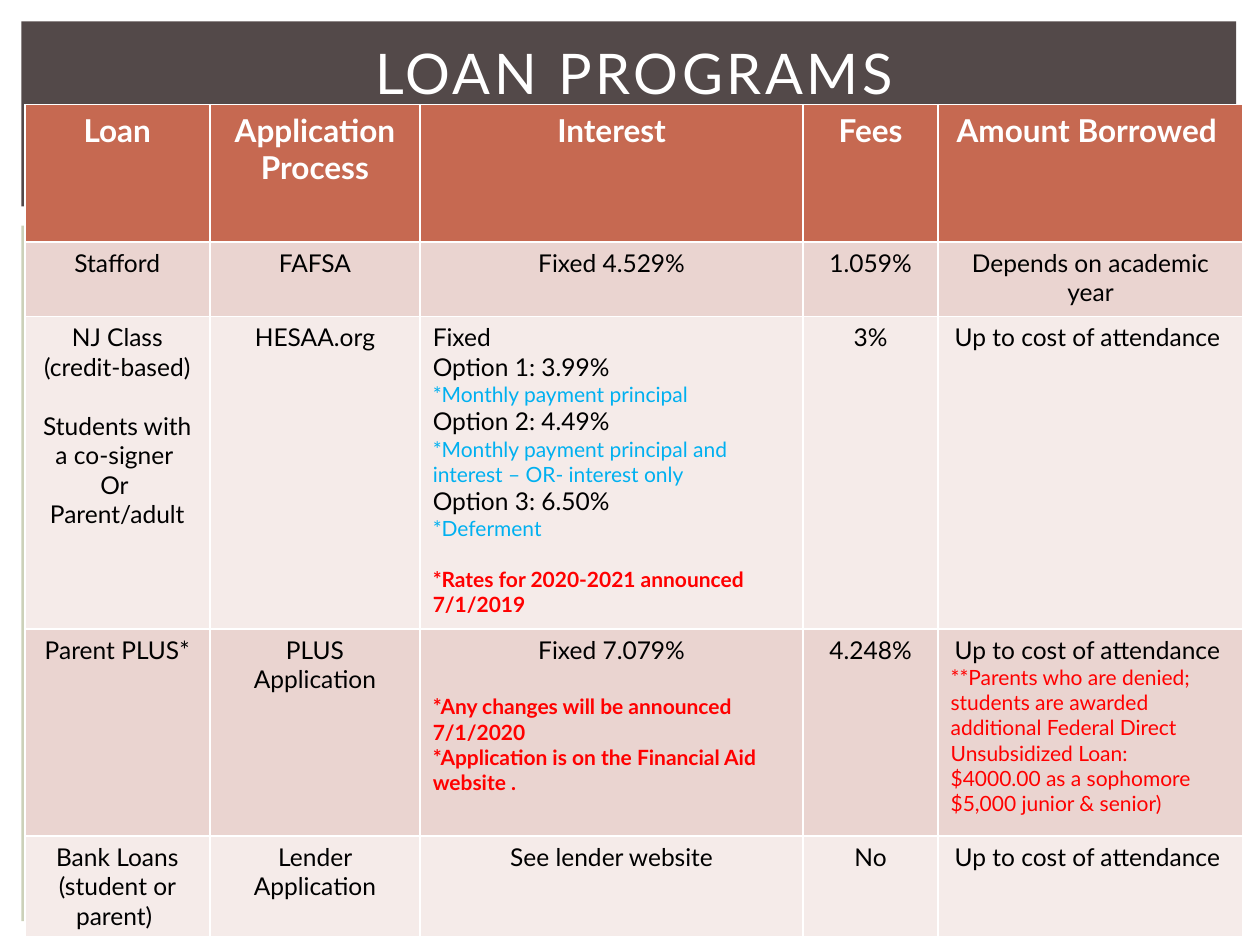
import pptx
import pptx.dml.color
import pptx.enum.shapes
import pptx.enum.text
import pptx.util

Cm, Pt = pptx.util.Cm, pptx.util.Pt
ALIGN = pptx.enum.text.PP_ALIGN
FONT = "Lato"

# Paragraph styles: size, colour, bold, alignment
STYLES = {
    "header": (18, "FFFFFF", True, ALIGN.CENTER),
    "body": (14, "000000", False, ALIGN.CENTER),
    "option": (14, "000000", False, ALIGN.LEFT),
    "note": (12, "00B0F0", False, ALIGN.LEFT),
    "warning": (12, "FF0000", True, ALIGN.LEFT),
    "condition": (12, "FF0000", False, ALIGN.LEFT),
}

# left, top, width, height in cm, then fill
PANELS = [
    (0.43, 4.55, 24.54, 14.02, "CCD1B9"),
    (0.43, 0.43, 24.49, 3.73, "534949"),
]
TITLE = "LOAN PROGRAMS"
COLUMN_WIDTHS = [3.73, 4.24, 7.72, 2.72, 6.15]
ROW_HEIGHTS = [2.77, 1.5, 6.3, 4.17, 1.52]
HEADER_FILL = "C66951"
BAND_FILLS = ["F5EBE9", "EAD4D0"]

# A cell is a string, or a list of (text, style[, space before in points])
ROWS = [
    ["Loan", "Application Process", "Interest", "Fees", "Amount Borrowed "],
    ["Stafford", "FAFSA", "Fixed 4.529%", "1.059%", "Depends on academic year"],
    [
        [("NJ Class", "body"),
         ("(credit-based)", "body"),
         ("Students with a co-signer ", "body", 16.8),
         ("Or ", "body"),
         ("Parent/adult", "body")],
        "HESAA.org",
        [("Fixed", "option"),
         ("Option 1: 3.99%", "option"),
         ("*Monthly payment principal", "note"),
         ("Option 2: 4.49%", "option"),
         ("*Monthly payment principal and interest – OR- interest only", "note"),
         ("Option 3: 6.50%", "option"),
         ("*Deferment", "note"),
         ("*Rates for 2020-2021 announced 7/1/2019", "warning", 14.4)],
        "3%",
        "Up to cost of attendance ",
    ],
    [
        "Parent PLUS*",
        "PLUS Application",
        [("Fixed 7.079%", "body"),
         ("*Any changes will be announced 7/1/2020", "warning", 16.8),
         ("*Application is on the Financial Aid website .", "warning")],
        "4.248%",
        [("Up to cost of attendance ", "body"),
         ("**Parents who are denied; students are awarded additional "
          "Federal Direct Unsubsidized Loan:", "condition"),
         ("$4000.00 as a sophomore $5,000 junior & senior)", "condition")],
    ],
    ["Bank Loans (student or parent) ", "Lender Application",
     "See lender website", "No", "Up to cost of attendance "],
]


def rgb(value):
    return pptx.dml.color.RGBColor.from_string(value)


def format_font(font, size, color, bold=False):
    font.name = FONT
    font.size = Pt(size)
    font.color.rgb = rgb(color)
    font.bold = bold


def fill_solid(item, color):
    item.fill.solid()
    item.fill.fore_color.rgb = rgb(color)


def add_panel(slide, left, top, width, height, color):
    shape = slide.shapes.add_shape(
        pptx.enum.shapes.MSO_SHAPE.RECTANGLE,
        Cm(left), Cm(top), Cm(width), Cm(height))
    shape.shadow.inherit = False
    shape.line.fill.background()
    fill_solid(shape, color)


def write_cell(cell, content, default_style):
    if isinstance(content, str):
        content = [(content, default_style)]
    cell.text_frame.text = "\n".join(entry[0] for entry in content)
    for paragraph, (_, style, *gap) in zip(cell.text_frame.paragraphs, content):
        size, color, bold, alignment = STYLES[style]
        paragraph.alignment = alignment
        if gap:
            paragraph.space_before = Pt(gap[0])
        format_font(paragraph.runs[0].font, size, color, bold)


def add_loan_table(slide):
    table = slide.shapes.add_table(
        len(ROWS), len(COLUMN_WIDTHS), Cm(0.5), Cm(2.11),
        Cm(sum(COLUMN_WIDTHS)), Cm(sum(ROW_HEIGHTS))).table
    for column, width in zip(table.columns, COLUMN_WIDTHS):
        column.width = Cm(width)
    for index, (row, height) in enumerate(zip(table.rows, ROW_HEIGHTS)):
        row.height = Cm(height)
        style = "body" if index else "header"
        color = BAND_FILLS[index % 2] if index else HEADER_FILL
        for cell, content in zip(row.cells, ROWS[index]):
            fill_solid(cell, color)
            write_cell(cell, content, style)


def add_title(slide):
    text_frame = slide.shapes.add_textbox(
        Cm(1.14), Cm(0), Cm(23.29), Cm(2.92)).text_frame
    text_frame.word_wrap = True
    text_frame.vertical_anchor = pptx.enum.text.MSO_ANCHOR.MIDDLE
    text_frame.text = TITLE
    paragraph = text_frame.paragraphs[0]
    paragraph.alignment = ALIGN.CENTER
    run = paragraph.runs[0]
    format_font(run.font, 32, "FFFFFF")
    run.font._element.set("spc", "200")  # letter spacing of 2 pt


def main():
    presentation = pptx.Presentation()
    presentation.slide_width = Cm(25.4)
    presentation.slide_height = Cm(19.05)
    slide = presentation.slides.add_slide(presentation.slide_layouts[6])
    for panel in PANELS:
        add_panel(slide, *panel)
    add_loan_table(slide)
    add_title(slide)
    presentation.save("out.pptx")


if __name__ == "__main__":
    main()
